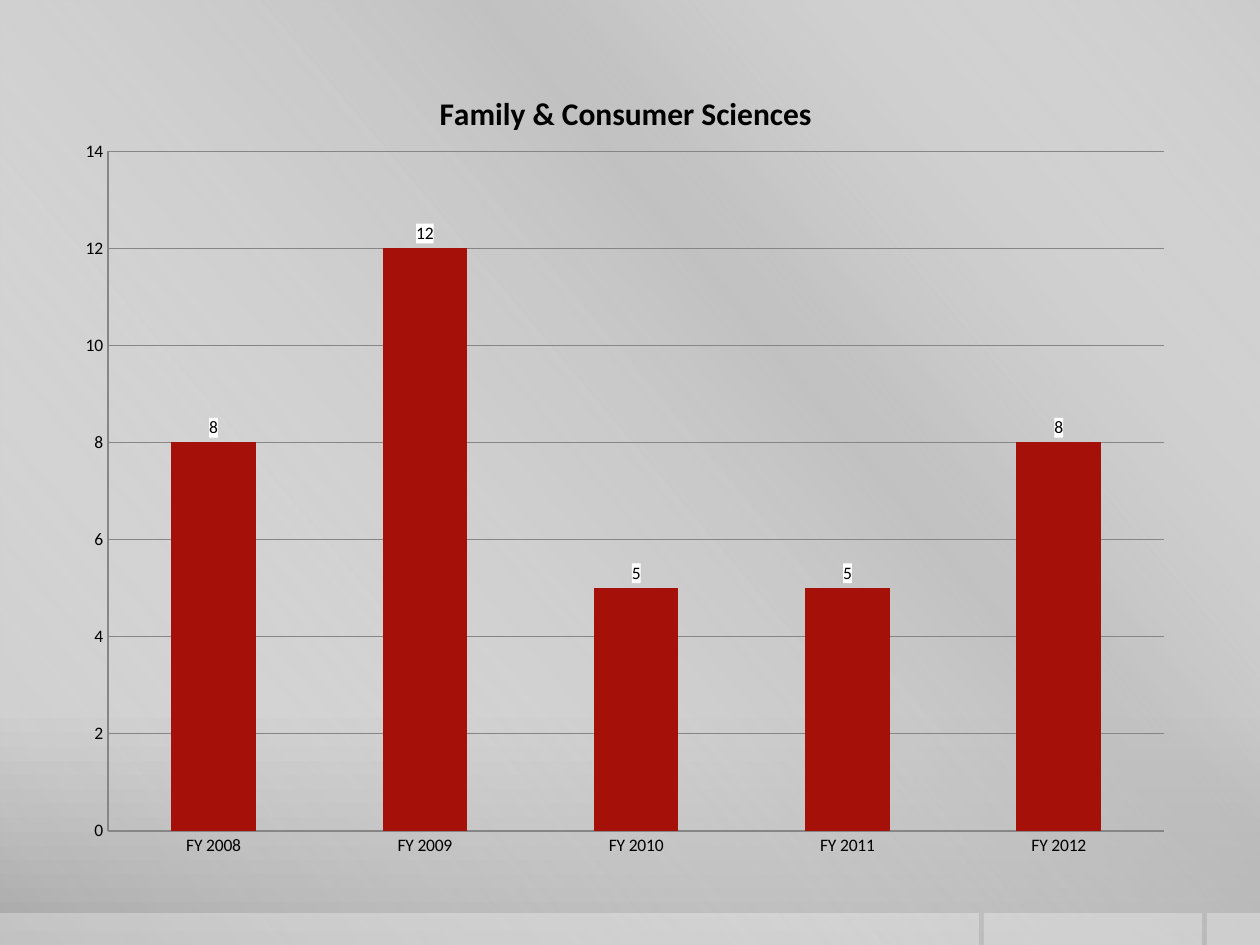
from pptx import Presentation
from pptx import util as u
from pptx.chart.data import CategoryChartData
from pptx.dml.color import RGBColor
from pptx.enum import chart as ch, shapes
from pptx.oxml import parse_xml
from pptx.oxml.ns import nsdecls, qn

PX = u.Inches(1) // 126
COLORS = {
    "black": "000000", "white": "FFFFFF", "bar": "A51009", "axis": "868686",
    "light": "CBCBCB", "middle": "C8C8C8", "dark": "A7A7A7", "band": "BFBFBF",
}


def rgb(name):
    """Return a named colour."""
    return RGBColor.from_string(COLORS[name])


def set_gradient(fill, root, stops, angle):
    """Fill with (position, colour, opacity) stops at a clockwise angle."""
    fill.gradient()
    grad = root.xpath(".//a:gradFill")[0]
    for child in list(grad):
        grad.remove(child)
    items = "".join(
        f'<a:gs pos="{pos * 1000}"><a:srgbClr val="{COLORS[name]}">'
        f'<a:alpha val="{alpha * 1000}"/></a:srgbClr></a:gs>'
        for pos, name, alpha in stops)
    grad.append(parse_xml(f'<a:gsLst {nsdecls("a")}>{items}</a:gsLst>'))
    grad.append(parse_xml(
        f'<a:lin {nsdecls("a")} ang="{angle * 60000}" scaled="0"/>'))


def add_rect(slide, x, y, w, h):
    """Add a rectangle without line or shadow."""
    sp = slide.shapes.add_shape(
        shapes.MSO_SHAPE.RECTANGLE, *(v * PX for v in (x, y, w, h)))
    sp.shadow.inherit = False
    sp.line.fill.background()
    return sp


def add_footer_tile(slide, x, w):
    """Add a translucent white tile along the bottom edge."""
    sp = add_rect(slide, x, 913, w, 32)
    sp.fill.solid()
    sp.fill.fore_color.rgb = rgb("white")
    color = sp.element.spPr.find(qn("a:solidFill"))[0]
    color.append(parse_xml(f'<a:alpha {nsdecls("a")} val="30000"/>'))


def set_layout(element, index, **fractions):
    """Place a chart part by fractions of the chart size."""
    for old in element.findall(qn("c:layout")):
        element.remove(old)
    target = '<c:layoutTarget val="inner"/>' if "w" in fractions else ""
    modes = "".join(f'<c:{k}Mode val="edge"/>' for k in "xy")
    values = "".join(f'<c:{k} val="{v}"/>' for k, v in fractions.items())
    element.insert(index, parse_xml(
        f'<c:layout {nsdecls("c")}><c:manualLayout>{target}{modes}{values}'
        '</c:manualLayout></c:layout>'))


def style_font(font, size, bold=False):
    """Set the chart typeface."""
    font.name, font.size, font.bold = "Calibri", u.Pt(size), bold
    font.color.rgb = rgb("black")


def style_line(line):
    """Set a thin grey line."""
    line.color.rgb = rgb("axis")
    line.width = u.Pt(0.75)


def style_axes(chart):
    """Format both axes and the gridlines."""
    for axis in (chart.category_axis, chart.value_axis):
        axis.major_tick_mark = axis.minor_tick_mark = ch.XL_TICK_MARK.NONE
        style_line(axis.format.line)
    axis = chart.value_axis
    axis.minimum_scale, axis.maximum_scale, axis.major_unit = 0, 14, 2
    axis.has_major_gridlines = True
    style_line(axis.major_gridlines.format.line)


def style_bars(plot):
    """Format the columns and their value labels."""
    plot.gap_width = 150
    plot.vary_by_categories = False
    series = plot.series[0]
    series.format.fill.solid()
    series.format.fill.fore_color.rgb = rgb("bar")
    labels = series.data_labels
    labels.show_value = True
    labels.position = ch.XL_LABEL_POSITION.OUTSIDE_END
    style_font(labels.font, 10)
    labels._element.get_or_add_txPr().addprevious(parse_xml(
        f'<c:spPr {nsdecls("c", "a")}><a:solidFill><a:srgbClr '
        f'val="{COLORS["white"]}"/></a:solidFill></c:spPr>'))


def add_column_chart(slide):
    """Add the yearly column chart."""
    data = CategoryChartData()
    data.categories = [f"FY {year}" for year in range(2008, 2013)]
    data.add_series("Series 1", (8, 12, 5, 5, 8))
    chart = slide.shapes.add_chart(
        ch.XL_CHART_TYPE.COLUMN_CLUSTERED,
        *(v * PX for v in (63, 53, 1124, 819)), data).chart
    style_font(chart.font, 10)
    chart.has_legend = False
    chart.has_title = True
    tf = chart.chart_title.text_frame
    tf.text = "Family & Consumer Sciences"
    style_font(tf.paragraphs[0].runs[0].font, 18, True)
    style_axes(chart)
    style_bars(chart.plots[0])
    root = chart.element
    set_layout(root.xpath(".//c:chart/c:title")[0], 1, x=0.33, y=0.04)
    set_layout(root.xpath(".//c:plotArea")[0], 0, x=0.04, y=0.12, w=0.94, h=0.83)


def main():
    """Build the slide."""
    prs = Presentation()
    prs.slide_width, prs.slide_height = 1260 * PX, 945 * PX
    slide = prs.slides.add_slide(prs.slide_layouts[6])
    set_gradient(slide.background.fill, slide.element, (
        (0, "light", 100), (76, "middle", 100), (100, "dark", 100)), 90)
    sheen = add_rect(slide, 0, 0, 1260, 945)
    set_gradient(sheen.fill, sheen.element, (
        (0, "white", 0), (34, "band", 61), (38, "band", 76),
        (100, "white", 0)), 140)
    for x, w in ((1207, 53), (984, 218), (0, 979)):
        add_footer_tile(slide, x, w)
    add_column_chart(slide)
    prs.save("out.pptx")


if __name__ == "__main__":
    main()
